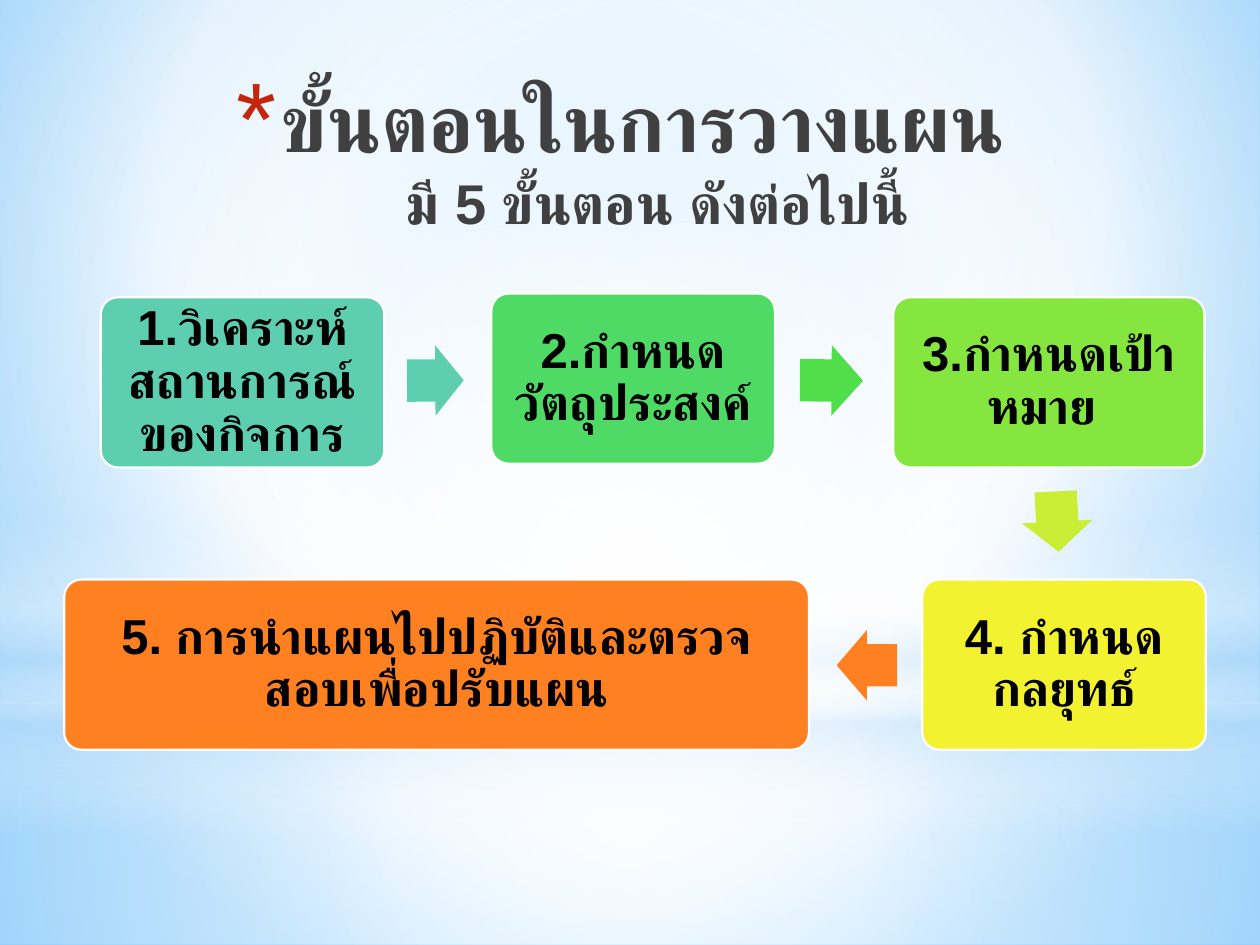
"""Build a slide showing the five steps of planning as a chain of boxes."""
import dataclasses

import lxml.etree
import pptx
import pptx.dml.color
import pptx.enum.shapes
import pptx.enum.text
import pptx.oxml.ns
import pptx.util


@dataclasses.dataclass(frozen=True)
class Theme:
    font: str = "Arial"
    title_font: str = "Roboto"
    title_size: int = 46
    subtitle_size: int = 32
    step_size: int = 28
    title: str = "404040"
    bullet: str = "C3260C"
    ink: str = "000000"
    white: str = "FFFFFF"
    mist: str = "B4DCFA"
    sky: str = "9ED5FF"
    deep_sky: str = "5BB9FF"
    teal: str = "5DCEAF"
    green: str = "4EDA64"
    leaf: str = "50DE4A"
    lime: str = "86E640"
    citron: str = "CAEE36"
    yellow: str = "F2F230"
    orange: str = "FF8021"


theme = Theme()
qn = pptx.oxml.ns.qn
Shape = pptx.enum.shapes.MSO_SHAPE


def write(para, text, *, size, color, font=theme.font, line=1.0):
    para.alignment = pptx.enum.text.PP_ALIGN.CENTER
    para.line_spacing = line
    span = para.add_run()
    span.text = text
    span.font.name = font
    span.font.size = pptx.util.Pt(size)
    span.font.bold = True
    span.font.color.rgb = pptx.dml.color.RGBColor.from_string(color)


def fade(element, stops, focus=None):
    solid = element.find(".//" + qn("a:solidFill"))
    gradient = lxml.etree.Element(qn("a:gradFill"), rotWithShape="1")
    stop_list = lxml.etree.SubElement(gradient, qn("a:gsLst"))
    for position, color, opacity in stops:
        stop = lxml.etree.SubElement(stop_list, qn("a:gs"), pos=str(position * 1000))
        tint = lxml.etree.SubElement(stop, qn("a:srgbClr"), val=color)
        if opacity < 100:
            lxml.etree.SubElement(tint, qn("a:alpha"), val=str(opacity * 1000))
    if focus:
        radial = lxml.etree.SubElement(gradient, qn("a:path"), path="circle")
        edges = {side: str(share * 1000) for side, share in zip("ltrb", focus)}
        lxml.etree.SubElement(radial, qn("a:fillToRect"), **edges)
    else:
        lxml.etree.SubElement(gradient, qn("a:lin"), ang="5400000", scaled="0")
    solid.getparent().replace(solid, gradient)


deck = pptx.Presentation()
deck.slide_width = pptx.util.Inches(10)
deck.slide_height = pptx.util.Inches(7.5)
column = deck.slide_width / 100
row = deck.slide_height / 75
page = deck.slides.add_slide(deck.slide_layouts[6])

page.background.fill.solid()
page.background.fill.fore_color.rgb = pptx.dml.color.RGBColor.from_string(theme.white)
fade(page._element,
     [(0, theme.sky, 100), (60, theme.white, 100), (100, theme.deep_sky, 100)],
     (20, 10, 20, 60))

center = (50, 50, 50, 50)
glows = [
    (Shape.RECTANGLE, 55.8, 19.2, center,
     [(0, theme.white, 91), (37, theme.white, 76), (100, theme.mist, 79)]),
    (Shape.RECTANGLE, 0, 55.8, center,
     [(0, theme.white, 89), (48, theme.white, 62), (100, theme.mist, 79)]),
    (Shape.RECTANGLE, 41.2, 25, None,
     [(0, theme.white, 0), (29, theme.white, 30), (45, theme.mist, 40),
      (55, theme.white, 26), (65, theme.mist, 60), (100, theme.white, 0)]),
    (Shape.OVAL, 17.5, 55.8, center, [(0, theme.white, 100), (56, theme.white, 0)]),
]
for kind, top, height, focus, stops in glows:
    glow = page.shapes.add_shape(
        kind, 0, round(top * row), deck.slide_width, round(height * row))
    glow.shadow.inherit = False
    glow.line.fill.background()
    glow.fill.solid()
    fade(glow._element.spPr, stops, focus)

steps = [
    ("1.วิเคราะห์สถานการณ์ของกิจการ", 8, 23.6, 22.5, theme.teal),
    ("2.กำหนดวัตถุประสงค์ ", 39, 23.3, 22.5, theme.green),
    ("3.กำหนดเป้าหมาย ", 70.9, 23.6, 24.7, theme.lime),
    ("4. กำหนดกลยุทธ์", 73.2, 46, 22.5, theme.yellow),
    ("5. การนำแผนไปปฏิบัติและตรวจสอบเพื่อปรับแผน", 5.1, 46, 59.1, theme.orange),
]
for text, left, top, width, color in steps:
    box = page.shapes.add_shape(
        Shape.ROUNDED_RECTANGLE, round(left * column), round(top * row),
        round(width * column), round(13.5 * row))
    box.adjustments[0] = 0.1
    box.shadow.inherit = False
    box.fill.solid()
    box.fill.fore_color.rgb = pptx.dml.color.RGBColor.from_string(color)
    box.line.color.rgb = pptx.dml.color.RGBColor.from_string(theme.white)
    box.line.width = pptx.util.Pt(1.25)
    frame = box.text_frame
    frame.word_wrap = True
    frame.vertical_anchor = pptx.enum.text.MSO_ANCHOR.MIDDLE
    frame.margin_left = frame.margin_right = round(1.1 * column)
    frame.margin_top = frame.margin_bottom = round(1.1 * row)
    write(frame.paragraphs[0], text, size=theme.step_size, color=theme.ink, line=0.9)

arrows = [
    (32.3, 27.4, 4.5, 359.6, theme.teal),
    (63.5, 27.4, 5, 0.4, theme.leaf),
    (81.5, 38.6, 4.8, 87.1, theme.citron),
    (66.4, 50, 4.8, 180, theme.orange),
]
for left, top, width, turn, color in arrows:
    arrow = page.shapes.add_shape(
        Shape.RIGHT_ARROW, round(left * column), round(top * row),
        round(width * column), round(5.6 * row))
    arrow.adjustments[0] = 0.6
    arrow.adjustments[1] = 0.5
    arrow.rotation = turn
    arrow.shadow.inherit = False
    arrow.fill.solid()
    arrow.fill.fore_color.rgb = pptx.dml.color.RGBColor.from_string(color)
    arrow.line.fill.background()

heading = page.shapes.add_textbox(
    round(2 * column), round(5.2 * row), round(94.5 * column), round(12.5 * row))
frame = heading.text_frame
frame.word_wrap = True
title, subtitle = frame.paragraphs[0], frame.add_paragraph()
write(title, "ขั้นตอนในการวางแผน", size=theme.title_size, color=theme.title,
      font=theme.title_font)
write(subtitle, "มี 5 ขั้นตอน ดังต่อไปนี้", size=theme.subtitle_size, color=theme.title)

layout = title._p.get_or_add_pPr()
layout.set("marL", str(round(3.5 * column)))
layout.set("indent", str(round(-3.5 * column)))
bullet_color = lxml.etree.SubElement(layout, qn("a:buClr"))
lxml.etree.SubElement(bullet_color, qn("a:srgbClr"), val=theme.bullet)
lxml.etree.SubElement(layout, qn("a:buSzPct"), val="128000")
lxml.etree.SubElement(layout, qn("a:buFont"), typeface=theme.font)
lxml.etree.SubElement(layout, qn("a:buChar"), char="*")
subtitle._p.get_or_add_pPr().set("marL", str(round(5.9 * column)))

deck.save("out.pptx")
